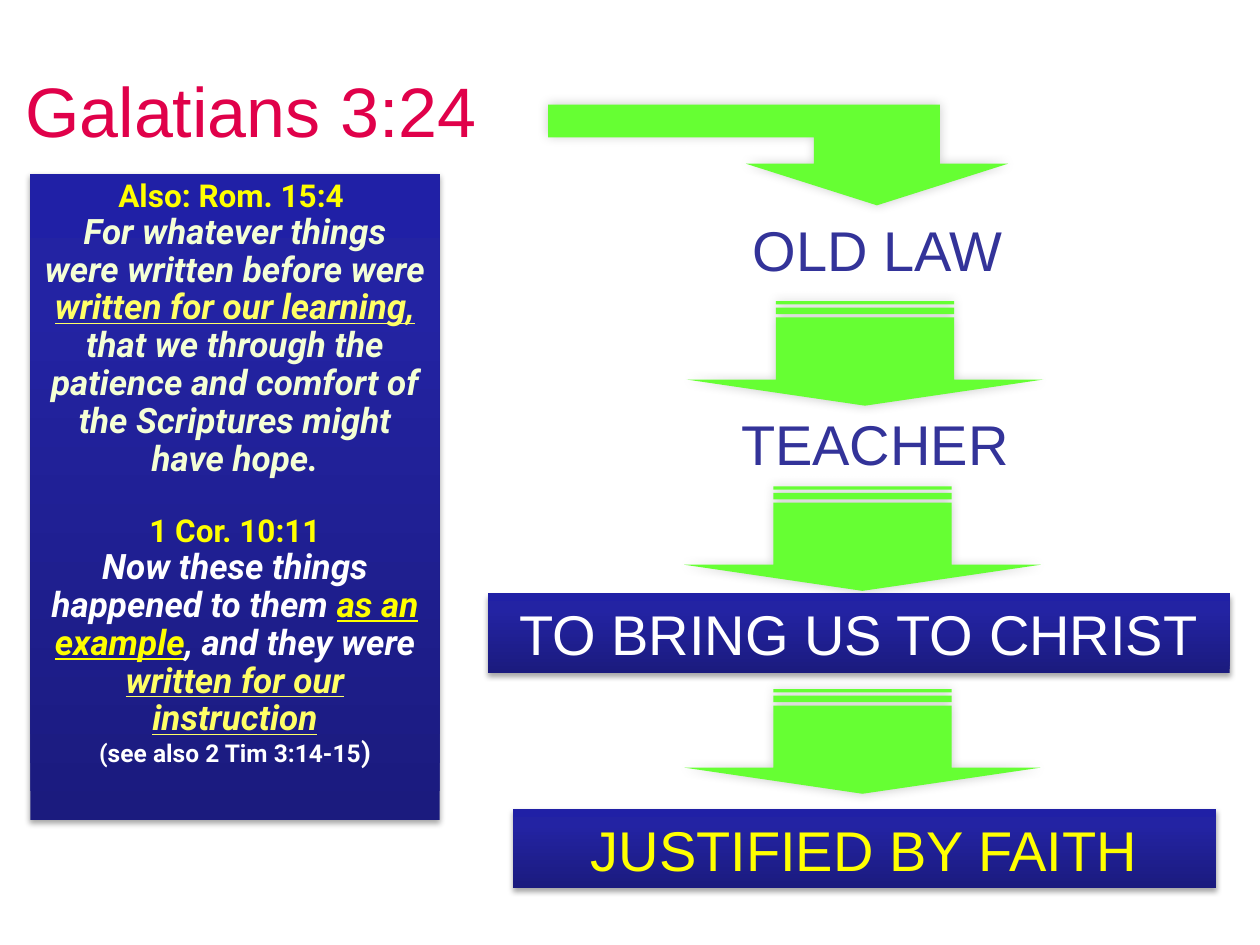
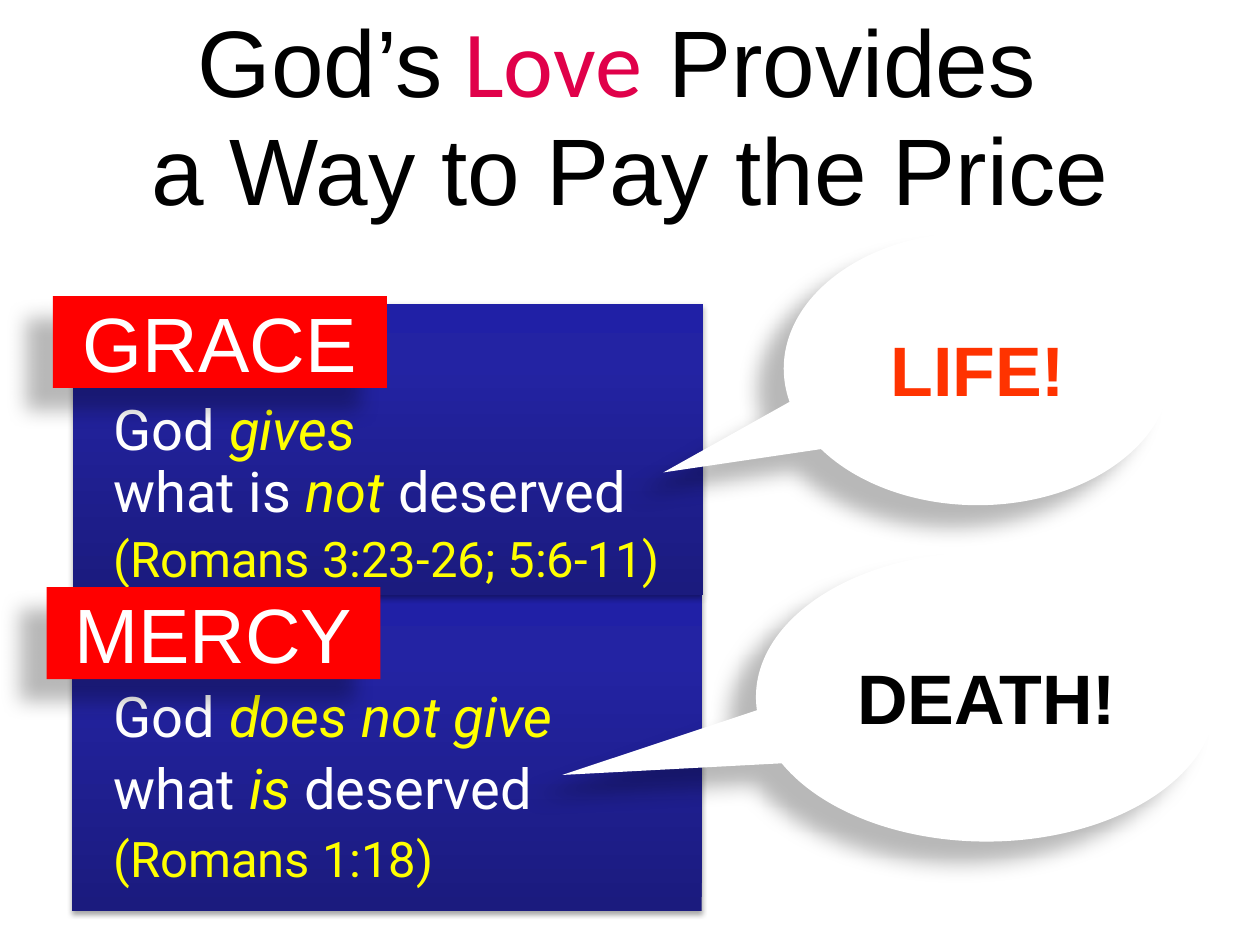
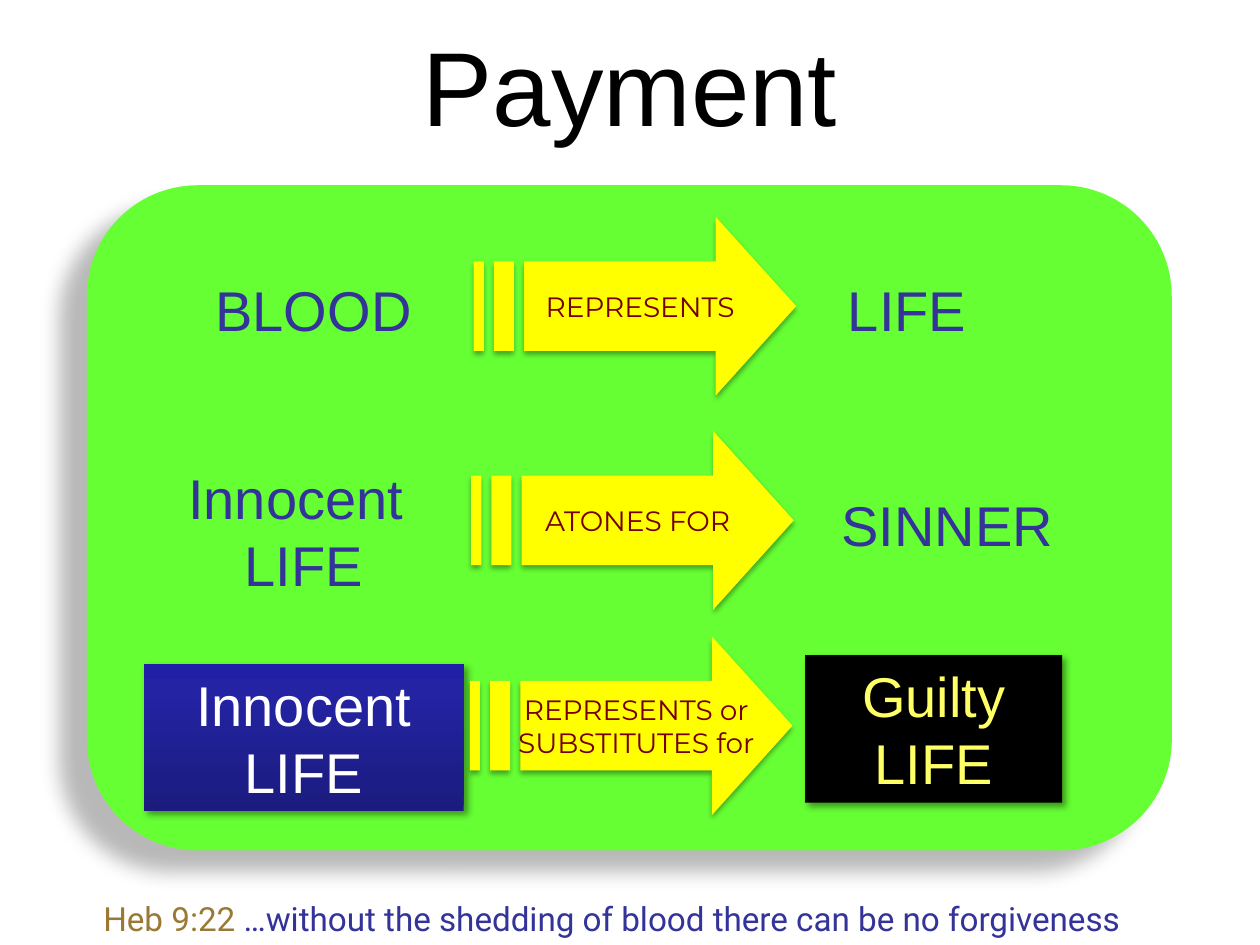
from copy import deepcopy
from dataclasses import dataclass
from typing import NamedTuple

from lxml.etree import SubElement
from pptx import Presentation
from pptx.dml.color import RGBColor
from pptx.enum.shapes import MSO_SHAPE
from pptx.enum.text import MSO_ANCHOR, MSO_AUTO_SIZE, PP_ALIGN
from pptx.oxml.ns import qn
from pptx.util import Pt

SCALE = 9144


class Shadow(NamedTuple):
    """Opacity in percent, blur and distance in points, direction in degrees."""
    opacity: int
    blur: float
    distance: float
    direction: int


@dataclass(frozen=True)
class Theme:
    """Colours, fonts, type sizes and shadows of the deck."""
    heading: str = "Arial"
    body: str = "Roboto"
    caption: str = "Montserrat"
    accent: str = "Calibri"
    black: str = "000000"
    white: str = "FFFFFF"
    crimson: str = "E0014A"
    navy: str = "333399"
    green: str = "66FF33"
    yellow: str = "FFFF00"
    lemon: str = "FFFF66"
    cream: str = "F4FFD5"
    red: str = "FF0000"
    orange: str = "FF3300"
    maroon: str = "760000"
    gold: str = "997934"
    gradient: tuple = ((0, "1B1B7E"), (0.8, "2323A3"), (1, "2020A6"))
    hero: int = 60
    title: int = 54
    tag: int = 44
    subtitle: int = 40
    label: int = 32
    reference: int = 28
    verse: int = 20
    footer: int = 19
    citation: int = 18
    small: int = 16
    note: int = 14
    glow: Shadow = Shadow(20, 6, 0, 225)
    soft: Shadow = Shadow(35, 3.1, 1.8, 90)
    deep: Shadow = Shadow(28, 11.8, 19.7, 141)
    corner: Shadow = Shadow(40, 4, 3, 45)


THEME = Theme()


class Span(NamedTuple):
    """A stretch of text in one format; style holds any of b, i and u."""
    text: str
    color: str
    size: int = THEME.label
    font: str = THEME.heading
    style: str = ""


class Line(NamedTuple):
    """A paragraph of spans with the space before it in points."""
    spans: list
    before: int = 0


def px(length):
    """Turn px into EMU."""
    return round(length * SCALE)


def verse(text, color, style="bi", size=THEME.verse):
    """Return a span of scripture."""
    return Span(text, color, size, THEME.body, style)


class Deck:
    """Holds the style and the current slide, and draws each kind of element."""

    def __init__(self, theme):
        """Start an empty deck."""
        self.theme = theme
        self.presentation = Presentation()
        self.presentation.slide_width = px(1000)
        self.presentation.slide_height = px(750)
        self.slide = None

    def start(self, box, spans, align=PP_ALIGN.CENTER):
        """Add a slide with its title."""
        layout = self.presentation.slide_layouts[5]
        self.slide = self.presentation.slides.add_slide(layout)
        title = self.slide.shapes.title
        title.left, title.top, title.width, title.height = map(px, box)
        self.set_lines(title, [Line(spans)], align, MSO_ANCHOR.MIDDLE, (0, 0, 0, 0), 0.95)

    def set_lines(self, shape, lines, align=PP_ALIGN.CENTER, anchor=MSO_ANCHOR.TOP,
                  margins=(10, 5, 10, 5), spacing=1.0, wrap=True):
        """Fill a shape with formatted paragraphs."""
        frame = shape.text_frame
        frame.word_wrap = wrap
        frame.auto_size = MSO_AUTO_SIZE.NONE
        frame.vertical_anchor = anchor
        (frame.margin_left, frame.margin_top,
         frame.margin_right, frame.margin_bottom) = map(px, margins)
        for index, line in enumerate(lines):
            paragraph = frame.add_paragraph() if index else frame.paragraphs[0]
            paragraph.alignment = align
            paragraph.line_spacing = spacing
            paragraph.space_before = Pt(line.before)
            for span in line.spans:
                self.add_span(paragraph, span)

    def add_span(self, paragraph, span):
        """Append a span, breaking the line at each newline."""
        for index, part in enumerate(span.text.split("\n")):
            if index:
                paragraph.add_line_break()
            run = paragraph.add_run()
            run.text = part
            font = run.font
            font.name, font.size = span.font, Pt(span.size)
            font.color.rgb = RGBColor.from_string(span.color)
            font.bold, font.italic, font.underline = (key in span.style for key in "biu")

    def paint(self, shape, color, shadow):
        """Set fill, outline and shadow; no colour means the blue gradient."""
        if color:
            shape.fill.solid()
            shape.fill.fore_color.rgb = RGBColor.from_string(color)
        else:
            shape.fill.gradient()
            shape.fill.gradient_angle = 90
            stop_list = shape.element.spPr.find(".//" + qn("a:gsLst"))
            stop_list.append(deepcopy(stop_list[-1]))
            for stop, (position, shade) in zip(shape.fill.gradient_stops, self.theme.gradient):
                stop.position = position
                stop.color.rgb = RGBColor.from_string(shade)
        shape.line.fill.background()
        shape.shadow.inherit = False
        effects = shape.element.spPr.find(qn("a:effectLst"))
        outer = SubElement(effects, qn("a:outerShdw"), blurRad=str(Pt(shadow.blur)),
                           dist=str(Pt(shadow.distance)),
                           dir=str(shadow.direction * 60000), rotWithShape="0")
        shade = SubElement(outer, qn("a:srgbClr"), val=self.theme.black)
        SubElement(shade, qn("a:alpha"), val=str(shadow.opacity * 1000))

    def block(self, box, color=None, shadow=THEME.soft, kind=MSO_SHAPE.RECTANGLE):
        """Draw a filled preset shape."""
        shape = self.slide.shapes.add_shape(kind, *map(px, box))
        self.paint(shape, color, shadow)
        return shape

    def banner(self, box, span, color=None, shadow=THEME.soft):
        """Draw a rectangle with a label at its top."""
        self.set_lines(self.block(box, color, shadow), [Line([span])])

    def tag(self, box, text):
        """Draw a red heading tag."""
        theme = self.theme
        self.set_lines(self.block(box, theme.red, theme.deep),
                       [Line([Span(text, theme.white, theme.tag)])],
                       anchor=MSO_ANCHOR.MIDDLE, wrap=False)

    def callout(self, box, tip, text, color):
        """Draw a white speech bubble whose tip is a share of its size from the centre."""
        theme = self.theme
        bubble = self.block(box, theme.white, theme.deep, MSO_SHAPE.OVAL_CALLOUT)
        bubble.adjustments[0], bubble.adjustments[1] = tip
        self.set_lines(bubble, [Line([Span(text, color, theme.subtitle, style="b")])],
                       anchor=MSO_ANCHOR.MIDDLE)

    def label(self, box, *spans):
        """Place a centred text box."""
        self.set_lines(self.slide.shapes.add_textbox(*map(px, box)), [Line(spans)])

    def outline(self, contours, color, shadow):
        """Draw a freeform from closed contours."""
        contours = [[(px(x), px(y)) for x, y in contour] for contour in contours]
        builder = self.slide.shapes.build_freeform(*contours[0][0])
        for index, (first, *rest) in enumerate(contours):
            if index:
                builder.move_to(*first)
            builder.add_line_segments(rest)
        shape = builder.convert_to_shape()
        self.paint(shape, color, shadow)
        return shape

    def striped_arrow(self, box, color, shadow):
        """Draw a right arrow with two stripes behind its shaft."""
        left, top, width, height = box
        tail, neck, tip = (left + width * share for share in (5 / 32, 3 / 4, 1))
        high, low = top + height / 4, top + height * 3 / 4
        arrow = [(neck, top), (neck, high), (tail, high), (tail, low),
                 (neck, low), (neck, top + height), (tip, top + height / 2)]
        stripes = [[(left + width * start, high), (left + width * start, low),
                    (left + width * end, low), (left + width * end, high)]
                   for start, end in ((1 / 16, 1 / 8), (0, 1 / 32))]
        return self.outline([arrow, *stripes], color, shadow)

    def down_arrow(self, left, top):
        """Draw a green striped arrow pointing down."""
        arrow = self.striped_arrow((left, top, 83, 283), self.theme.green, self.theme.glow)
        arrow.rotation = 90

    def relation(self, left, top, *captions):
        """Draw a yellow striped arrow with its captions."""
        theme = self.theme
        arrow = self.striped_arrow((left, top, 256, 142), theme.yellow, theme.soft)
        self.set_lines(arrow, [Line([Span(caption, theme.maroon, theme.small, theme.caption)])
                               for caption in captions],
                       anchor=MSO_ANCHOR.MIDDLE, margins=(18, 5, 10, 5), wrap=False)


def build_law(deck):
    """Build the slide on the law as a teacher."""
    theme = deck.theme
    deck.start((20, 28, 980, 125), [Span("Galatians 3:24", theme.crimson, theme.subtitle)],
               PP_ALIGN.LEFT)
    for left, top in ((643, 447), (643, 286), (645, 139)):
        deck.down_arrow(left, top)
    deck.outline([[(696, 163), (592, 130), (646, 130), (646, 109), (435, 109),
                   (435, 83), (746, 83), (746, 130), (800, 130)]], theme.green, theme.glow)
    deck.label((509, 166, 375, 63), Span("OLD LAW", theme.navy))
    deck.label((507, 320, 375, 63), Span("TEACHER", theme.navy))
    deck.banner((387, 471, 589, 63), Span("TO BRING US TO CHRIST", theme.white))
    deck.banner((407, 642, 558, 63), Span("JUSTIFIED BY FAITH", theme.yellow))
    passages = [
        Line([verse("Also: Rom. 15:4 ", theme.yellow, "b", theme.citation)]),
        Line([verse("For whatever things were written before were ", theme.cream),
              verse("written for our learning,", theme.lemon, "biu"),
              verse(" that we through the patience and comfort of the Scriptures "
                    "might have hope.", theme.cream)]),
        Line([verse("1 Cor. 10:11", theme.yellow, "b", theme.citation)], 21),
        Line([verse("Now these things happened to them ", theme.white),
              verse("as an example", theme.yellow, "biu"),
              verse(", and they were ", theme.white),
              verse("written for our instruction", theme.lemon, "biu")]),
        Line([verse("(see also 2 Tim 3:14-15", theme.white, "b", theme.note),
              verse(")", theme.white, "b", theme.small)]),
    ]
    deck.set_lines(deck.block((24, 138, 325, 513)), passages, spacing=0.9)


def build_love(deck):
    """Build the slide on grace and mercy."""
    theme = deck.theme
    deck.start((0, 32, 1000, 125),
               [Span("God’s", theme.black, theme.title),
                Span(" Love", theme.crimson, theme.title, theme.accent),
                Span(" Provides \na Way to Pay the Price", theme.black, theme.title)])
    deck.block((57, 472, 500, 251))
    deck.block((58, 241, 500, 231))

    def plain(text):
        """Return a white span."""
        return verse(text, theme.white, "", theme.label)

    def stressed(text):
        """Return a yellow italic span."""
        return verse(text, theme.yellow, "i", theme.label)

    def reference(text):
        """Return a smaller yellow span."""
        return verse(text, theme.yellow, "", theme.reference)

    meanings = [
        Line([plain("God "), stressed("gives")]),
        Line([plain("what is "), stressed("not"), plain(" deserved")], 1),
        Line([reference("(Romans 3:23-26; 5:6-11)")], 6),
        Line([plain("God "), stressed("does not give")], 58),
        Line([plain("what "), stressed("is"), plain(" deserved")], 6),
        Line([reference("(Romans 1:18)")], 8),
    ]
    deck.set_lines(deck.slide.shapes.add_textbox(*map(px, (42, 246, 540, 473))), meanings,
                   PP_ALIGN.LEFT, margins=(48, 73, 10, 5), spacing=0.9)
    deck.callout((622, 184, 308, 217), (-0.81, 0.38), "LIFE!", theme.orange)
    deck.callout((600, 438, 366, 230), (-0.92, 0.27), "DEATH!", theme.black)
    deck.tag((42, 235, 265, 73), "GRACE")
    deck.tag((37, 466, 265, 73), "MERCY")


def build_payment(deck):
    """Build the slide on payment by substitution."""
    theme = deck.theme
    deck.start((0, 9, 1000, 125), [Span("Payment", theme.black, theme.hero)])
    deck.block((69, 147, 861, 528), theme.green, theme.deep, MSO_SHAPE.ROUNDED_RECTANGLE)
    deck.banner((114, 527, 254, 117), Span("Innocent LIFE", theme.white), shadow=theme.corner)
    deck.banner((639, 520, 204, 117), Span("Guilty LIFE", theme.lemon), theme.black, theme.corner)
    for left, top, height, text in ((96, 214, 63, "BLOOD"), (567, 214, 63, "LIFE"),
                                    (88, 363, 117, "Innocent \nLIFE"), (599, 384, 63, "SINNER")):
        deck.label((left, top, 306, height), Span(text, theme.navy))
    deck.relation(376, 172, "REPRESENTS")
    deck.relation(374, 342, "ATONES FOR")
    deck.relation(373, 505, "REPRESENTS or", "SUBSTITUTES for")
    deck.label((0, 708, 971, 42), verse("Heb 9:22 ", theme.gold, "", theme.footer),
               verse("…without the shedding of blood there can be no forgiveness",
                     theme.navy, "", theme.footer))


def main():
    """Build and save the deck."""
    deck = Deck(THEME)
    build_law(deck)
    build_love(deck)
    build_payment(deck)
    deck.presentation.save("out.pptx")


if __name__ == "__main__":
    main()
